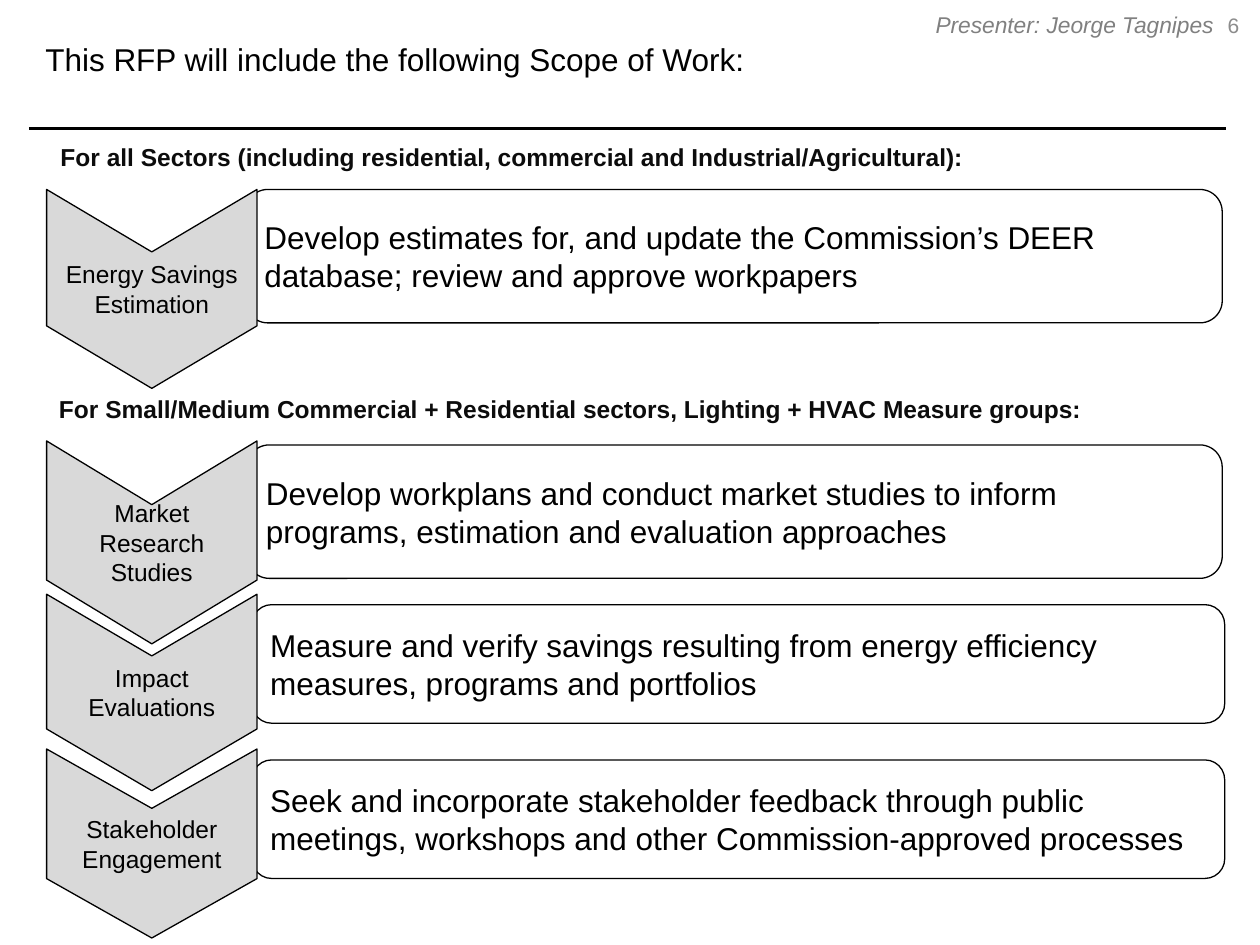
from lxml import etree
from pptx import Presentation
from pptx import util as u
from pptx.dml import color
from pptx.enum import shapes, text
from pptx.oxml import ns

BLACK = color.RGBColor(0x00, 0x00, 0x00)
INK = color.RGBColor(0x0C, 0x0C, 0x0C)
SILVER = color.RGBColor(0xD9, 0xD9, 0xD9)
NUMBER_GRAY = color.RGBColor(0x8C, 0x8C, 0x8C)
PRESENTER_GRAY = color.RGBColor(0x80, 0x80, 0x80)

LEFT, CENTER, RIGHT = text.PP_ALIGN.LEFT, text.PP_ALIGN.CENTER, text.PP_ALIGN.RIGHT
MIDDLE, TOP = text.MSO_ANCHOR.MIDDLE, text.MSO_ANCHOR.TOP

TITLE_FONT = {"size": u.Pt(18)}
PANEL_FONT = {"size": u.Pt(18)}
LABEL_FONT = {"size": u.Pt(14)}
HEADING_FONT = {"size": u.Pt(14), "bold": True}
PRESENTER_FONT = {"size": u.Pt(13), "italic": True}
NUMBER_FONT = {"size": u.Pt(12)}

CHEVRON_WIDTH = 4.24
CHEVRON_NOTCH = 0.314
HEADINGS = [
    ((0.97, 2.74, 23.16, 0.86),
     "For all Sectors (including residential, commercial and Industrial/Agricultural):"),
    ((0.94, 7.82, 23.16, 0.86),
     "For Small/Medium Commercial + Residential sectors, Lighting + HVAC Measure groups:"),
]
STEPS = [
    ((0.94, 3.82, 23.7, 4.01), (4.01, 0, 2.69), "Energy Savings Estimation",
     "Develop estimates for, and update the Commission’s DEER database; "
     "review and approve workpapers"),
    ((0.94, 8.89, 23.7, 4.09), (4.04, 0.08, 2.69), "Market Research Studies",
     "Develop workplans and conduct market studies to inform programs, "
     "estimation and evaluation approaches"),
    ((0.94, 11.98, 23.75, 3.96), (4.14, 0.21, 2.39), "Impact Evaluations",
     "Measure and verify savings resulting from energy efficiency measures, "
     "programs and portfolios"),
    ((0.94, 15.1, 23.75, 3.81), (4.14, 0.22, 2.39), "Stakeholder Engagement",
     "Seek and incorporate stakeholder feedback through public meetings, "
     "workshops and other Commission-approved processes"),
]


def set_attributes(target, values):
    for name, value in values.items():
        setattr(target, name, value)


def lengths(box):
    return [u.Cm(value) for value in box]


def write(shape, words, font, ink=BLACK, alignment=LEFT, anchor=MIDDLE):
    frame = shape.text_frame
    frame.text = words
    set_attributes(frame, {"word_wrap": True, "auto_size": text.MSO_AUTO_SIZE.NONE,
                           "vertical_anchor": anchor})
    paragraph = frame.paragraphs[0]
    paragraph.alignment = alignment
    run_font = paragraph.runs[0].font
    set_attributes(run_font, {"name": "Arial", **font})
    run_font.color.rgb = ink


def add_text(slide, box, words, font, **layout):
    shape = slide.shapes.add_textbox(*lengths(box))
    write(shape, words, font, **layout)
    return shape


def add_outlined(slide, kind, box):
    shape = slide.shapes.add_shape(kind, *lengths(box))
    shape.shadow.inherit = False
    shape.fill.background()
    shape.line.color.rgb = BLACK
    shape.line.width = u.Pt(0.75)
    return shape


def add_header(slide, box):
    left, top, width, height = box
    title = slide.shapes.title
    title_box = lengths((left + 0.08, top, width - 0.13, height - 0.2))
    set_attributes(title, dict(zip(("left", "top", "width", "height"), title_box)))
    write(title, "This RFP will include the following Scope of Work:", TITLE_FONT)

    bottom = top + height
    rule = slide.shapes.add_connector(
        shapes.MSO_CONNECTOR.STRAIGHT, *lengths((left, bottom, left + width, bottom)))
    rule.line.color.rgb = BLACK
    rule.line.width = u.Pt(2)
    etree.SubElement(rule._element.spPr, ns.qn("a:effectLst"))

    right = left + width
    add_text(slide, (right - 0.38, top, 1.07, 1.02), "6", NUMBER_FONT,
             ink=NUMBER_GRAY, alignment=CENTER)
    presenter = add_text(slide, (right - 6.2, top + 0.18, 6.2, 0.61),
                         "Presenter: Jeorge Tagnipes", PRESENTER_FONT,
                         ink=PRESENTER_GRAY, alignment=RIGHT)
    presenter.text_frame.margin_left = 0


def add_step(slide, box, panel_place, label, description):
    left, top, width, height = box
    panel_left, panel_top, panel_height = panel_place
    panel = add_outlined(slide, shapes.MSO_SHAPE.ROUNDED_RECTANGLE,
                         (left + panel_left, top + panel_top,
                          width - panel_left, panel_height))
    write(panel, description, PANEL_FONT)

    shift = (CHEVRON_WIDTH - height) / 2
    chevron = add_outlined(slide, shapes.MSO_SHAPE.CHEVRON,
                           (left + shift, top - shift, height, CHEVRON_WIDTH))
    chevron.rotation = 90
    chevron.adjustments[0] = CHEVRON_NOTCH
    chevron.fill.solid()
    chevron.fill.fore_color.rgb = SILVER
    write(chevron, label, LABEL_FONT, alignment=CENTER)
    chevron.text_frame._txBody.bodyPr.set("vert", "vert270")


def main():
    presentation = Presentation()
    presentation.slide_width = u.Cm(25.4)
    presentation.slide_height = u.Cm(19.05)
    slide = presentation.slides.add_slide(presentation.slide_layouts[5])
    add_header(slide, (0.58, 0, 24.13, 2.59))
    for step in STEPS:
        add_step(slide, *step)
    for box, words in HEADINGS:
        add_text(slide, box, words, HEADING_FONT, ink=INK, anchor=TOP)
    presentation.save("out.pptx")


if __name__ == "__main__":
    main()
